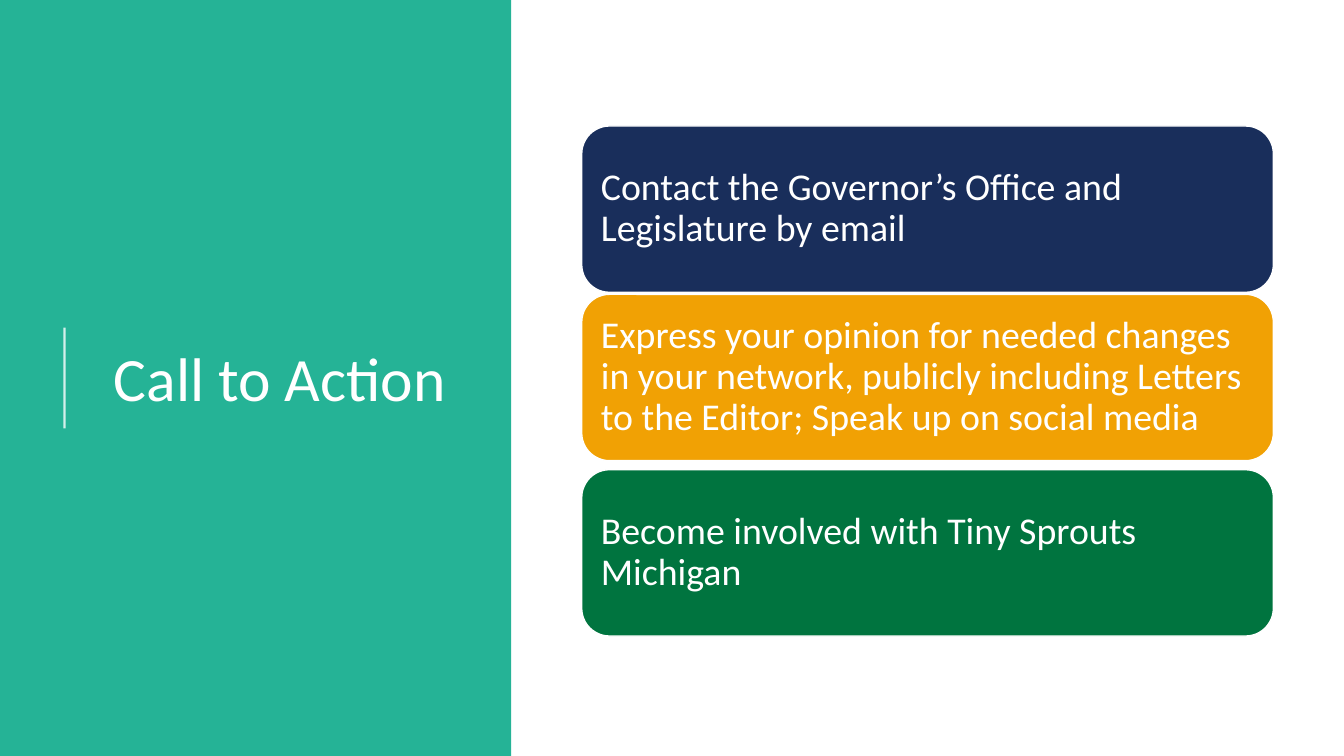
from lxml import etree
from pptx import Presentation
from pptx.dml.color import RGBColor
from pptx.enum.shapes import MSO_CONNECTOR as CONN, MSO_SHAPE as SHAPE
from pptx.enum.text import MSO_ANCHOR as ANCHOR, MSO_AUTO_SIZE as AUTO, PP_ALIGN as ALIGN
from pptx.oxml.ns import qn
from pptx.util import Inches, Pt

WHITE = RGBColor(0xFF, 0xFF, 0xFF)
TEAL = RGBColor(0x25, 0xB3, 0x96)
NAVY = RGBColor(0x19, 0x2E, 0x5B)
AMBER = RGBColor(0xF1, 0xA1, 0x04)
GREEN = RGBColor(0x00, 0x74, 0x3F)
FONT = "Calibri"

ACTIONS = [
    (0, NAVY, "Contact the Governor’s Office and Legislature by email"),
    (1.67, AMBER, "Express your opinion for needed changes in your network, "
                  "publicly including Letters to the Editor; Speak up on social media"),
    (3.41, GREEN, "Become involved with Tiny Sprouts Michigan"),
]


def write(tf, text, size):
    """Write one left-aligned white paragraph, centred vertically."""
    tf.word_wrap = True
    tf.auto_size = AUTO.NONE
    tf.vertical_anchor = ANCHOR.MIDDLE
    p = tf.paragraphs[0]
    p.alignment = ALIGN.LEFT
    p.line_spacing = 0.9
    r = p.add_run()
    r.text = text
    r.font.name = FONT
    r.font.size = Pt(size)
    r.font.color.rgb = WHITE


def add_box(s, kind, x, y, w, h, color):
    """Add a filled shape without shadow or outline."""
    sp = s.shapes.add_shape(kind, Inches(x), Inches(y), Inches(w), Inches(h))
    sp.shadow.inherit = False
    sp.fill.solid()
    sp.fill.fore_color.rgb = color
    sp.line.fill.background()
    return sp


def add_title_panel(s, x, y, w, h):
    """Build the coloured side panel with its rule and the slide title."""
    panel = add_box(s, SHAPE.RECTANGLE, x, y, w, h, TEAL)
    title = s.shapes.title
    title._element.addprevious(panel._element)
    title.left, title.top = Inches(x + 1.03), Inches(y + 0.78)
    title.width, title.height = Inches(w - 1.38), Inches(h - 1.48)
    write(title.text_frame, "Call to Action", 44)

    rule_x, middle = Inches(x + 0.64), y + h / 2
    rule = s.shapes.add_connector(CONN.STRAIGHT, rule_x, Inches(middle + 0.5),
                                  rule_x, Inches(middle - 0.5))
    rule.line.color.rgb = WHITE
    rule.line.width = Pt(1.5)
    color = rule._element.spPr.find(".//" + qn("a:srgbClr"))
    etree.SubElement(color, qn("a:alpha"), val="80000")
    etree.SubElement(rule._element.spPr, qn("a:effectLst"))


def add_actions(s, x, y, w, card_h):
    """Stack the action cards from the given top left corner."""
    for offset, color, text in ACTIONS:
        sp = add_box(s, SHAPE.ROUNDED_RECTANGLE, x, y + offset, w, card_h, color)
        sp.line.color.rgb = WHITE
        sp.line.width = Pt(1)
        tf = sp.text_frame
        tf.margin_left = tf.margin_right = Inches(0.11)
        tf.margin_top = tf.margin_bottom = Inches(0.11)
        write(tf, text, 27)


def main():
    """Build and save the slide."""
    prs = Presentation()
    prs.slide_width, prs.slide_height = Inches(13.33), Inches(7.5)
    s = prs.slides.add_slide(prs.slide_layouts[5])
    add_title_panel(s, 0, 0, 5.07, 7.5)
    add_actions(s, 5.77, 1.25, 6.86, 1.65)
    prs.save("out.pptx")


if __name__ == "__main__":
    main()
